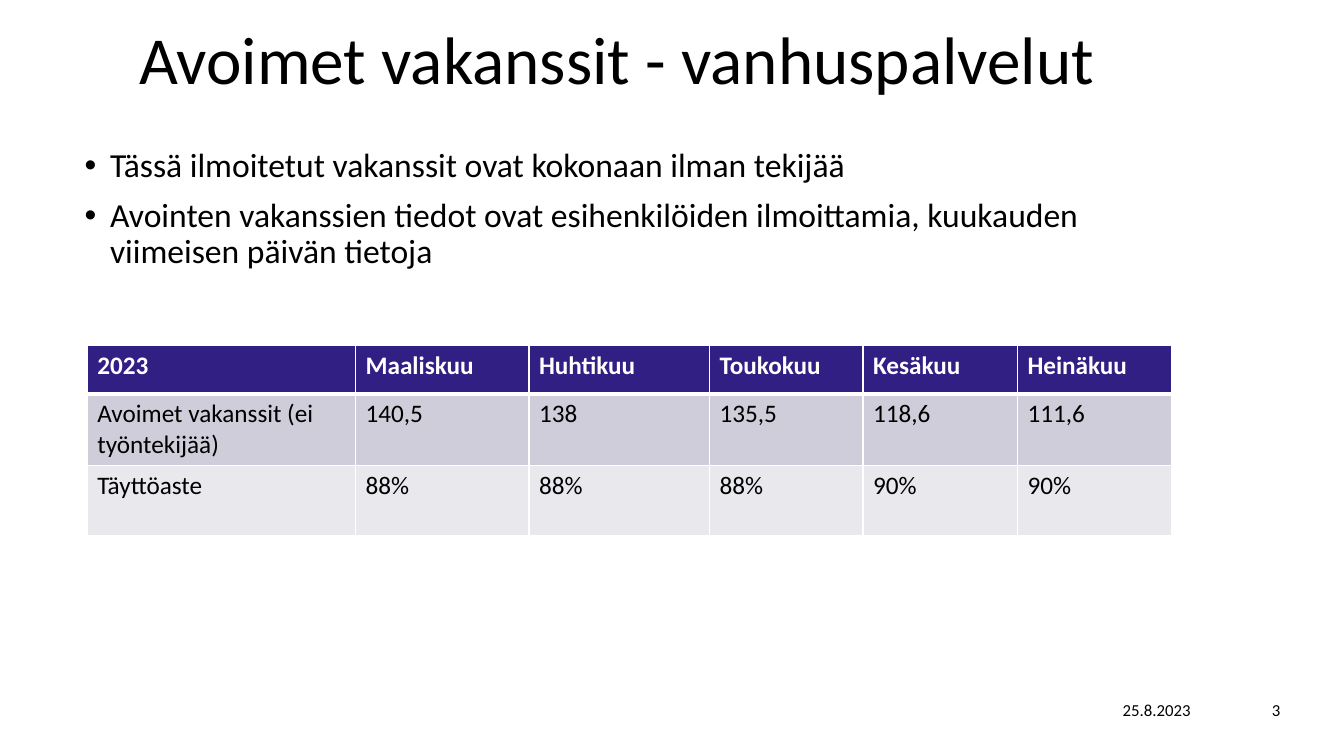
"""Build the slide on open vacancies in elderly care services."""
from dataclasses import dataclass

from lxml import etree
from pptx import Presentation
from pptx.dml.color import RGBColor
from pptx.enum.text import MSO_ANCHOR, MSO_AUTO_SIZE, PP_ALIGN
from pptx.oxml.ns import qn
from pptx.util import Cm, Pt

LEFT, CENTER = PP_ALIGN.LEFT, PP_ALIGN.CENTER
TOP, MIDDLE = MSO_ANCHOR.TOP, MSO_ANCHOR.MIDDLE
FIXED = MSO_AUTO_SIZE.NONE


@dataclass(frozen=True)
class Theme:
    """Hold the colours, font and type sizes."""
    font: str = "Calibri"
    ink: str = "000000"
    white: str = "FFFFFF"
    head: str = "311F83"
    bands: tuple = ("CECDD9", "E8E8ED")
    title: int = 48
    body: int = 24
    cell: int = 18
    foot: int = 12


THEME = Theme()
WIDTH = 27.33
TITLE = "Avoimet vakanssit - vanhuspalvelut"
POINTS = (
    "Tässä ilmoitetut vakanssit ovat kokonaan ilman tekijää",
    "Avointen vakanssien tiedot ovat esihenkilöiden ilmoittamia, "
    "kuukauden viimeisen päivän tietoja",
)
ROWS = (
    ("2023", "Maaliskuu", "Huhtikuu", "Toukokuu", "Kesäkuu", "Heinäkuu"),
    ("Avoimet vakanssit (ei työntekijää)",
     "140,5", "138", "135,5", "118,6", "111,6"),
    ("Täyttöaste", "88%", "88%", "88%", "90%", "90%"),
)
COLS = (6.76, 4.37, 4.55, 3.87, 3.89, 3.89)
HEIGHTS = (1.22, 1.76, 1.76)


def place(shape, left, top, width, height):
    """Set the position and size of a shape in centimetres."""
    shape.left, shape.top = Cm(left), Cm(top)
    shape.width, shape.height = Cm(width), Cm(height)


def add_bullet(para):
    """Give a paragraph a round bullet with a hanging indent."""
    props = para._p.get_or_add_pPr()
    props.set("marL", str(Cm(0.64)))
    props.set("indent", str(-Cm(0.64)))
    etree.SubElement(props, qn("a:buFont"), typeface="Arial")
    etree.SubElement(props, qn("a:buChar"), char="•")


def write(frame, *lines, size, color=THEME.ink, bold=False, align=LEFT,
          anchor=TOP, leading=1.0, gap=0, bullet=False):
    """Fill a text frame with formatted paragraphs."""
    frame.word_wrap = True
    frame.vertical_anchor = anchor
    for index, line in enumerate(lines):
        para = frame.add_paragraph() if index else frame.paragraphs[0]
        para.text = line
        para.alignment = align
        para.line_spacing = leading
        para.space_before = Pt(gap if index else 0)
        if bullet:
            add_bullet(para)
        font = para.runs[0].font
        font.name, font.size, font.bold = THEME.font, Pt(size), bold
        font.color.rgb = RGBColor.from_string(color)


def add_edges(cell, **widths):
    """Draw white cell borders with the given widths in points."""
    props = cell._tc.get_or_add_tcPr()
    for index, (side, width) in enumerate(widths.items()):
        line = etree.Element(qn(f"a:ln{side}"), w=str(Pt(width)))
        fill = etree.SubElement(line, qn("a:solidFill"))
        etree.SubElement(fill, qn("a:srgbClr"), val=THEME.white)
        props.insert(index, line)


def add_grid(slide, left, top):
    """Add the table of vacancies by month."""
    frame = slide.shapes.add_table(
        len(ROWS), len(COLS), Cm(left), Cm(top),
        Cm(sum(COLS)), Cm(sum(HEIGHTS)))
    table = frame.table
    for column, width in zip(table.columns, COLS):
        column.width = Cm(width)
    fills = (THEME.head, *THEME.bands)
    for r, (values, height, tint) in enumerate(zip(ROWS, HEIGHTS, fills)):
        table.rows[r].height = Cm(height)
        head = r == 0
        for c, value in enumerate(values):
            cell = table.cell(r, c)
            cell.fill.solid()
            cell.fill.fore_color.rgb = RGBColor.from_string(tint)
            add_edges(cell, L=1, R=1, T=3 if r == 1 else 1,
                      B=3 if head else 1)
            write(cell.text_frame, value, size=THEME.cell, bold=head,
                  color=THEME.white if head else THEME.ink)


def add_foot(slide, text, left, width):
    """Add a small centred text at the foot of the slide."""
    box = slide.shapes.add_textbox(Cm(left), Cm(17.37), Cm(width), Cm(1.02))
    write(box.text_frame, text, size=THEME.foot, align=CENTER, anchor=MIDDLE)


def main():
    """Build and save the slide."""
    deck = Presentation()
    deck.slide_width, deck.slide_height = Cm(33.87), Cm(19.05)
    slide = deck.slides.add_slide(deck.slide_layouts[1])
    title, body = slide.placeholders
    place(title, 1.88, 0.74, WIDTH, 1.7)
    place(body, 1.88, 3.61, WIDTH, 13.13)
    title.text_frame.auto_size = body.text_frame.auto_size = FIXED
    write(title.text_frame, TITLE, size=THEME.title, align=CENTER,
          anchor=MIDDLE, leading=0.9)
    write(body.text_frame, *POINTS, size=THEME.body, leading=0.9, gap=10,
          bullet=True)
    add_grid(slide, 2.2, 8.7)
    add_foot(slide, "25.8.2023", 27.84, 2.62)
    add_foot(slide, "3", 31.32, 1.68)
    deck.save("out.pptx")


if __name__ == "__main__":
    main()
